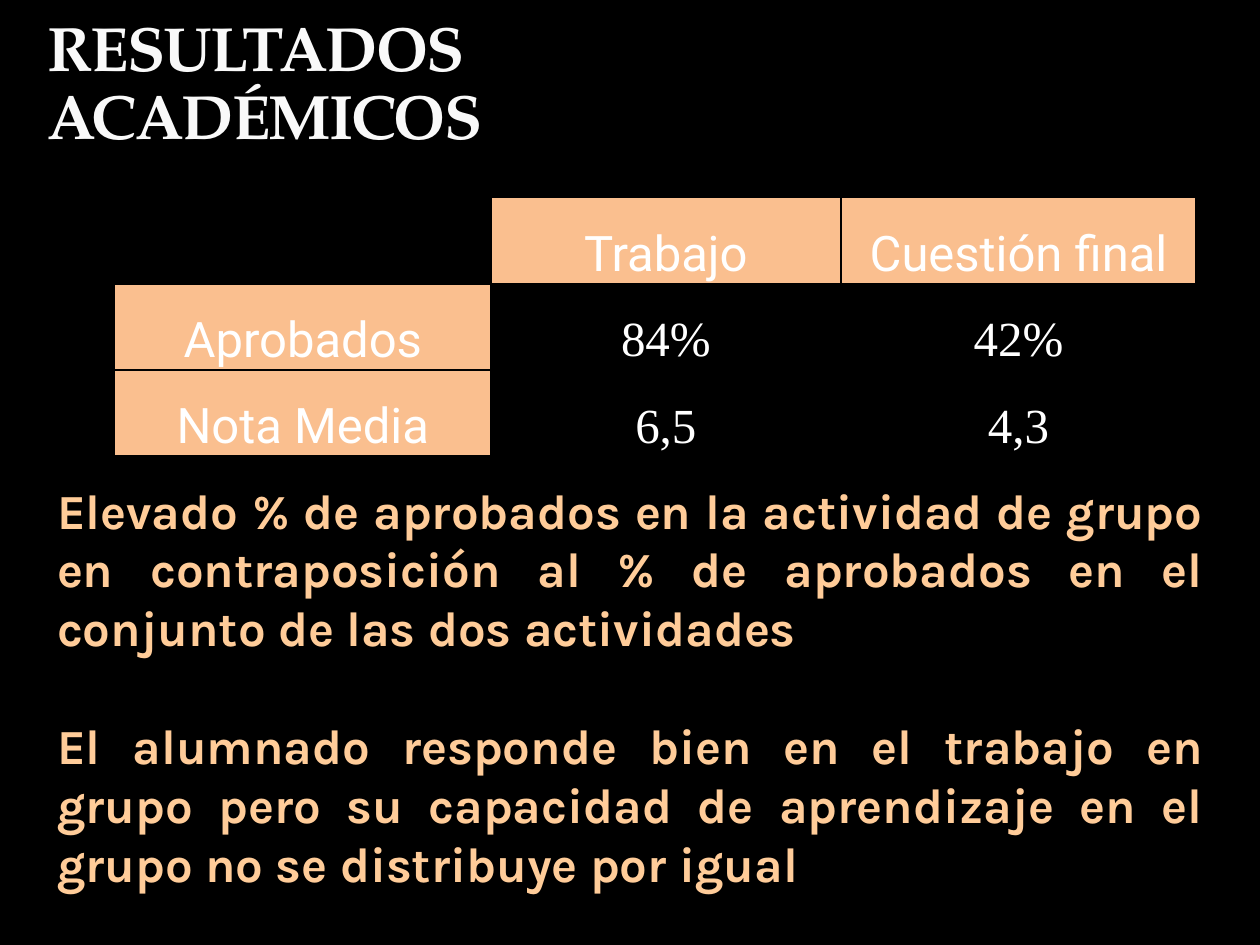
from dataclasses import dataclass

from lxml import etree
from pptx import Presentation
from pptx.dml.color import RGBColor
from pptx.enum import text
from pptx.oxml import ns
from pptx.util import Pt


@dataclass(frozen=True)
class Theme:
    back: str = "000000"
    head: str = "F9F9F9"
    edge: str = "585E76"
    cell: str = "FFFFFF"
    label: str = "FABF8F"
    body: str = "FFCC99"
    head_size: float = 35.7
    size: float = 28
    head_font: str = "TeX Gyre Pagella"
    label_font: str = "Roboto"
    value_font: str = "Times New Roman"
    body_font: str = "Karla"


def add_line(parent, tag, width, color, alpha=100, index=None):
    """Add a solid outline or border to a properties element."""
    line = etree.Element(ns.qn(tag), w=str(int(Pt(width))))
    fill = etree.SubElement(line, ns.qn("a:solidFill"))
    tint = etree.SubElement(fill, ns.qn("a:srgbClr"), val=color)
    if alpha < 100:
        etree.SubElement(tint, ns.qn("a:alpha"), val=str(alpha * 1000))
    parent.insert(len(parent) if index is None else index, line)


class Deck:
    def __init__(self, theme):
        self.theme = theme
        self.show = Presentation()
        self.show.slide_width, self.show.slide_height = Pt(720), Pt(540)
        self.slide = self.show.slides.add_slide(self.show.slide_layouts[5])
        fill = self.slide.background.fill
        fill.solid()
        fill.fore_color.rgb = RGBColor.from_string(theme.back)

    def style(self, para, font, size, color, align, bold=False):
        para.alignment = align
        para.font.name, para.font.size = font, Pt(size)
        para.font.bold = bold
        para.font.color.rgb = RGBColor.from_string(color)

    def title(self, words, left, top, width, height):
        t = self.theme
        shape = self.slide.shapes.title
        shape.left, shape.top = Pt(left), Pt(top)
        shape.width, shape.height = Pt(width), Pt(height)
        frame = shape.text_frame
        frame.text = words
        frame.word_wrap = True
        frame.auto_size = text.MSO_AUTO_SIZE.NONE
        frame.vertical_anchor = text.MSO_ANCHOR.BOTTOM
        para = frame.paragraphs[0]
        para.line_spacing = 0.9
        self.style(para, t.head_font, t.head_size, t.head,
                   text.PP_ALIGN.LEFT, True)
        # Tight letters with a faint outline
        props = para.runs[0]._r.get_or_add_rPr()
        props.set("spc", "-100")
        add_line(props, "a:ln", 0.25, t.edge, 25, 0)

    def table(self, rows, left, top, widths, height):
        grid = self.slide.shapes.add_table(
            len(rows), len(widths), Pt(left), Pt(top),
            Pt(sum(widths)), Pt(height * len(rows))).table
        grid.first_row = grid.horz_banding = False
        for col, width in zip(grid.columns, widths):
            col.width = Pt(width)
        for r, row in enumerate(rows):
            grid.rows[r].height = Pt(height)
            for c, words in enumerate(row):
                self.cell(grid.cell(r, c), words, r == 0 or c == 0)

    def cell(self, cell, words, label):
        t = self.theme
        cell.margin_left = cell.margin_right = Pt(5)
        cell.margin_top = cell.margin_bottom = 0
        cell.vertical_anchor = text.MSO_ANCHOR.MIDDLE
        if label and words:
            cell.fill.solid()
            cell.fill.fore_color.rgb = RGBColor.from_string(t.label)
        else:
            cell.fill.background()
        cell.text = words
        para = cell.text_frame.paragraphs[0]
        if words:
            para.line_spacing = 1.5
        self.style(para, t.label_font if label else t.value_font,
                   t.size, t.cell, text.PP_ALIGN.CENTER)
        # Borders come before the fill
        props = cell._tc.get_or_add_tcPr()
        for i, side in enumerate("LRTB"):
            add_line(props, f"a:ln{side}", 1, t.back, index=i)

    def notes(self, items, left, top, width, height, gap):
        t = self.theme
        frame = self.slide.shapes.add_textbox(
            Pt(left), Pt(top), Pt(width), Pt(height)).text_frame
        frame.word_wrap = True
        frame.auto_size = text.MSO_AUTO_SIZE.SHAPE_TO_FIT_TEXT
        frame.vertical_anchor = text.MSO_ANCHOR.MIDDLE
        for i, words in enumerate(items):
            para = frame.add_paragraph() if i else frame.paragraphs[0]
            para.text = words
            para.space_before = Pt(gap if i else 0)
            self.style(para, t.body_font, t.size, t.body,
                       text.PP_ALIGN.JUSTIFY, True)


def main():
    deck = Deck(Theme())

    # Heading
    deck.title("RESULTADOS ACADÉMICOS", 20, 26, 482.5, 65)

    # Results by activity
    deck.table([
        ["", "Trabajo", "Cuestión final"],
        ["Aprobados", "84%", "42%"],
        ["Nota Media", "6,5", "4,3"],
    ], 65.5, 113, [215, 200, 203], 44.6)

    # Conclusions
    deck.notes([
        "Elevado % de aprobados en la actividad de grupo en contraposición "
        "al % de aprobados en el conjunto de las dos actividades",
        "El alumnado responde bien en el trabajo en grupo pero su capacidad "
        "de aprendizaje en el grupo no se distribuye por igual",
    ], 25.5, 269.5, 669, 245, 33.6)

    deck.show.save("out.pptx")


if __name__ == "__main__":
    main()
